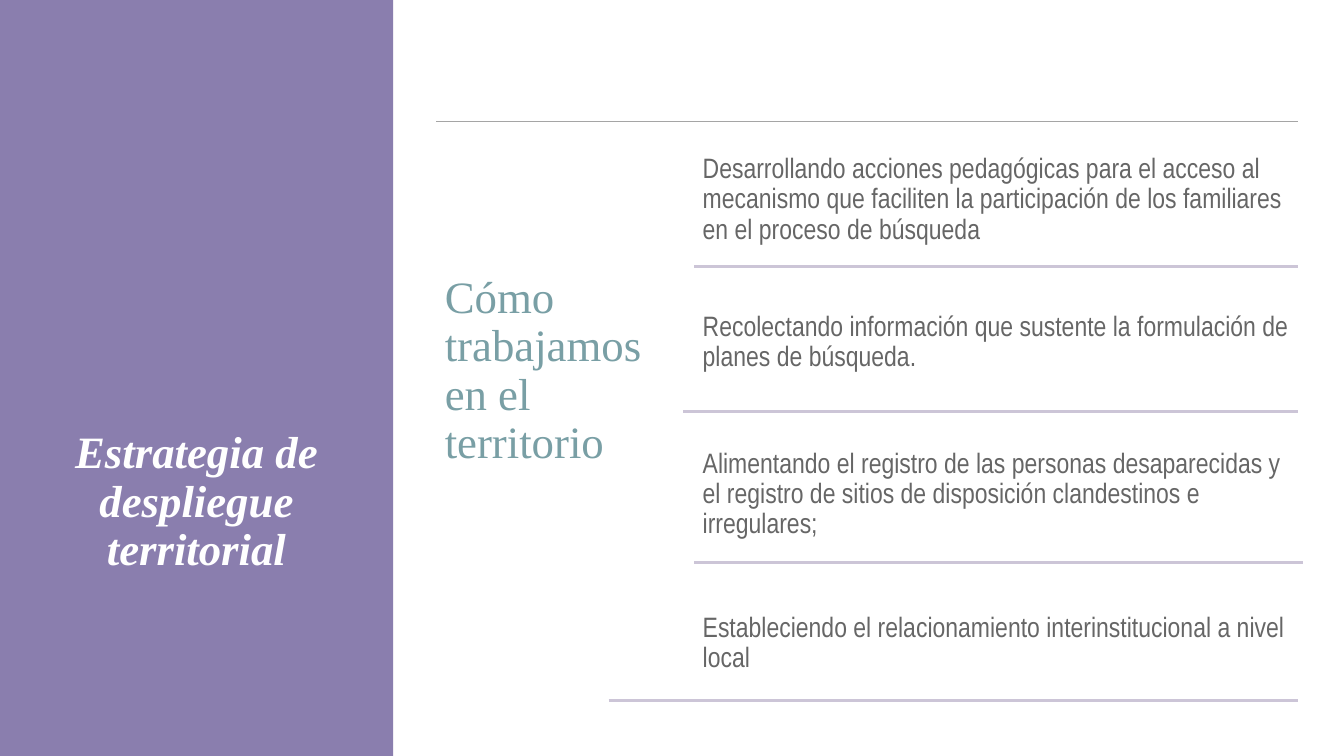
"""Build the slide on the territorial deployment strategy."""
import pptx
import pptx.util
import pptx.dml.color
import pptx.enum.shapes
import pptx.enum.text
import pptx.oxml

Cm, Pt = pptx.util.Cm, pptx.util.Pt
RGB = pptx.dml.color.RGBColor.from_string
ALIGN = pptx.enum.text.PP_ALIGN
ANCHOR = pptx.enum.text.MSO_ANCHOR

TITLE = "Estrategia de despliegue territorial"
HEAD = "Cómo trabajamos en el territorio"
ROWS = [
    {"text": "Desarrollando acciones pedagógicas para el acceso al mecanismo "
             "que faciliten la participación de los familiares en el proceso de búsqueda",
     "top": 3.68, "high": 2.54, "rule": (17.5, 32.7, 6.71)},
    {"text": "Recolectando información que sustente la formulación de planes de búsqueda.",
     "top": 7.65, "high": 1.78, "rule": (17.22, 32.7, 10.36)},
    {"text": "Alimentando el registro de las personas desaparecidas y el registro "
             "de sitios de disposición clandestinos e irregulares;",
     "top": 11.1, "high": 2.67, "rule": (17.5, 32.84, 14.17)},
    {"text": "Estableciendo el relacionamiento interinstitucional a nivel local",
     "top": 15.24, "high": 1.6, "rule": (15.34, 32.7, 17.65)},
]
THEME = {
    "panel": "8A7EAE",
    "top": ("A5A5A5", 0.5),
    "rule": ("CCC5D7", 2),
    "title": {"name": "Times New Roman", "size": Pt(32), "bold": True,
              "italic": True, "color": "FFFFFF"},
    "head": {"name": "Times New Roman", "size": Pt(32), "color": "799FA5"},
    "row": {"name": "Arial Narrow", "size": Pt(20), "color": "666666"},
}
WIDE, HIGH = 33.87, 19.05
SIDE = 9.91
LEFT, RIGHT, TOP = 11, 32.7, 3.05
TEXT = 17.5


def write(shape, text, style, box, pad, align=ALIGN.LEFT, anchor=ANCHOR.TOP):
    """Place a text shape and format its single paragraph."""
    for key, val in zip(("left", "top", "width", "height"), box):
        setattr(shape, key, Cm(val))
    frame = shape.text_frame
    form = {"word_wrap": True, "auto_size": pptx.enum.text.MSO_AUTO_SIZE.NONE,
            "vertical_anchor": anchor}
    for side, val in zip(("left", "top", "right", "bottom"), pad):
        form["margin_" + side] = Cm(val)
    for key, val in form.items():
        setattr(frame, key, val)
    para = frame.paragraphs[0]
    for key, val in {"alignment": align, "line_spacing": 0.9}.items():
        setattr(para, key, val)
    run = para.add_run()
    run.text = text
    for key, val in style.items():
        if key == "color":
            run.font.color.rgb = RGB(val)
        else:
            setattr(run.font, key, val)


def rule(shapes, start, end, y, style):
    """Draw a level line without a shadow."""
    line = shapes.add_connector(pptx.enum.shapes.MSO_CONNECTOR.STRAIGHT,
                                Cm(start), Cm(y), Cm(end), Cm(y))
    color, width = style
    line.line.color.rgb = RGB(color)
    line.line.width = Pt(width)
    line.element.spPr.append(pptx.oxml.parse_xml(
        '<a:effectLst xmlns:a="http://schemas.openxmlformats.org/drawingml/2006/main"/>'))


def main():
    """Compose and save the slide."""
    deck = pptx.Presentation()
    deck.slide_width, deck.slide_height = Cm(WIDE), Cm(HIGH)
    slide = deck.slides.add_slide(deck.slide_layouts[5])
    shapes = slide.shapes

    panel = shapes.add_shape(pptx.enum.shapes.MSO_SHAPE.RECTANGLE,
                             0, 0, Cm(SIDE), Cm(HIGH))
    panel.shadow.inherit = False
    panel.fill.solid()
    panel.fill.fore_color.rgb = RGB(THEME["panel"])
    panel.line.fill.background()
    shapes.title.element.addprevious(panel.element)
    write(shapes.title, TITLE, THEME["title"], (1.45, 8.18, 7.01, 8.97),
          (0.33, 0.18, 0.33, 0.18), ALIGN.CENTER, ANCHOR.MIDDLE)

    pad = (0.21,) * 4
    rule(shapes, LEFT, RIGHT, TOP, THEME["top"])
    write(shapes.add_textbox(0, 0, 0, 0), HEAD, THEME["head"],
          (LEFT, 6.71, 5.6, 5.5), pad)
    for row in ROWS:
        write(shapes.add_textbox(0, 0, 0, 0), row["text"], THEME["row"],
              (TEXT, row["top"], RIGHT - TEXT + 0.1, row["high"]), pad)
        rule(shapes, *row["rule"], THEME["rule"])
    deck.save("out.pptx")


if __name__ == "__main__":
    main()
